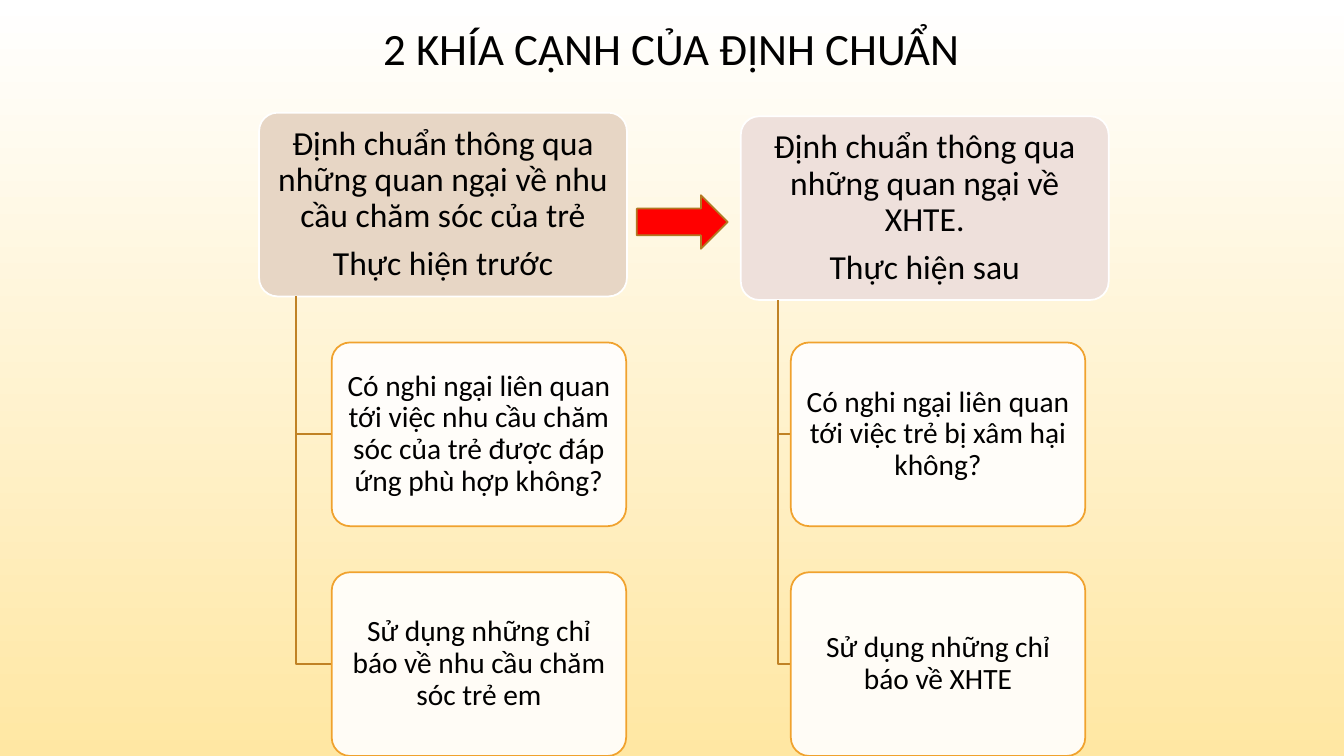
"""Build the slide on the two sides of setting a standard."""
from dataclasses import dataclass

from lxml import etree
from pptx import Presentation
from pptx.dml.color import RGBColor
from pptx.enum.shapes import MSO_SHAPE
from pptx.enum.text import MSO_ANCHOR, MSO_AUTO_SIZE, PP_ALIGN
from pptx.oxml.ns import qn
from pptx.shapes.autoshape import Shape
from pptx.slide import Slide
from pptx.text.text import TextFrame
from pptx.util import Cm, Pt

ROUND = MSO_SHAPE.ROUNDED_RECTANGLE
ARROW = MSO_SHAPE.RIGHT_ARROW
MIDDLE = MSO_ANCHOR.MIDDLE
CENTER = PP_ALIGN.CENTER
NO_FIT = MSO_AUTO_SIZE.NONE

FONT = "Calibri"
COLORS = {
    "text": "000000", "white": "FFFFFF", "sand": "FFE7A3",
    "tan": "E7D6C5", "rose": "EEE0DB", "gold": "F0A22E",
    "spine": "C08225", "red": "FF0000", "edge": "B27822",
}
HEAD_W, ITEM_W, CARD_H = 9.27, 7.42, 4.63
ITEM_TOP, ITEM_STEP = 8.63, 5.79


@dataclass
class Box:
    left: float
    top: float
    width: float
    height: float


@dataclass
class Branch:
    left: float
    top: float
    fill: str
    head: list[str]
    item_left: float
    items: list[str]


BRANCHES = [
    Branch(6.53, 2.84, "tan",
           ["Định chuẩn thông qua những quan ngại về nhu cầu chăm sóc của trẻ",
            "Thực hiện trước"],
           8.36,
           ["Có nghi ngại liên quan tới việc nhu cầu chăm sóc của trẻ "
            "được đáp ứng phù hợp không?",
            "Sử dụng những chỉ báo về nhu cầu chăm sóc trẻ em"]),
    Branch(18.67, 2.93, "rose",
           ["Định chuẩn thông qua những quan ngại về XHTE.",
            "Thực hiện sau"],
           19.93,
           ["Có nghi ngại liên quan tới việc trẻ bị xâm hại không?",
            "Sử dụng những chỉ báo về XHTE"]),
]


def color(name: str) -> RGBColor:
    """Look up a colour by name."""
    return RGBColor.from_string(COLORS[name])


def outline(shape: Shape, line: str) -> None:
    """Set the line of a shape and drop its shadow."""
    shape.shadow.inherit = False
    shape.line.color.rgb = color(line)
    shape.line.width = Pt(1.25)


def add_box(slide: Slide, kind: MSO_SHAPE, box: Box, fill: str, line: str) -> Shape:
    """Add a filled preset shape."""
    shape = slide.shapes.add_shape(
        kind, Cm(box.left), Cm(box.top), Cm(box.width), Cm(box.height))
    shape.fill.solid()
    shape.fill.fore_color.rgb = color(fill)
    outline(shape, line)
    return shape


def write(frame: TextFrame, lines: list[str], size: int, after: float = 0) -> None:
    """Fill a text frame with centred lines."""
    frame.text = "\n".join(lines)
    frame.word_wrap = True
    frame.auto_size = NO_FIT
    frame.vertical_anchor = MIDDLE
    for para in frame.paragraphs:
        para.alignment = CENTER
        para.line_spacing = 0.9
        para.space_before = Pt(0)
        para.space_after = Pt(after)
        para.font.name = FONT
        para.font.size = Pt(size)
        para.font.color.rgb = color("text")


def add_card(slide: Slide, box: Box, fill: str, line: str,
             lines: list[str], size: int) -> Shape:
    """Add a rounded card with text."""
    card = add_box(slide, ROUND, box, fill, line)
    card.adjustments[0] = 0.1
    frame = card.text_frame
    frame.margin_left = frame.margin_right = Cm(0.12)
    frame.margin_top = frame.margin_bottom = Cm(0.08)
    write(frame, lines, size, size * 0.35)
    return card


def add_elbow(slide: Slide, left: float, top: float, right: float, low: float) -> None:
    """Add a line that runs down and then right."""
    path = slide.shapes.build_freeform(Cm(left), Cm(top))
    path.add_line_segments(
        [(Cm(left), Cm(low)), (Cm(right), Cm(low))], close=False)
    elbow = path.convert_to_shape()
    elbow.fill.background()
    outline(elbow, "spine")


def add_branch(slide: Slide, branch: Branch) -> None:
    """Add a head card and the items hung below it."""
    add_card(slide, Box(branch.left, branch.top, HEAD_W, CARD_H),
             branch.fill, "white", branch.head, 24)
    for row, text in enumerate(branch.items):
        top = ITEM_TOP + row * ITEM_STEP
        add_elbow(slide, branch.left + HEAD_W / 10, branch.top + CARD_H,
                  branch.item_left, top + CARD_H / 2)
        card = add_card(slide, Box(branch.item_left, top, ITEM_W, CARD_H),
                        "white", "gold", [text], 21)
        tint = card.element.spPr.find(f"{qn('a:solidFill')}/{qn('a:srgbClr')}")
        etree.SubElement(tint, qn("a:alpha"), val="90000")


def main() -> None:
    """Build and save the slide."""
    deck = Presentation()
    deck.slide_width, deck.slide_height = Cm(33.87), Cm(19.05)
    slide = deck.slides.add_slide(deck.slide_layouts[5])

    back = slide.background.fill
    back.gradient()
    back.gradient_angle = 270
    for stop, name in zip(back.gradient_stops, ("white", "sand")):
        stop.color.rgb = color(name)

    title = slide.shapes.title
    title.left, title.top = Cm(2.33), Cm(0.53)
    title.width, title.height = Cm(29.21), Cm(1.5)
    write(title.text_frame, ["2 KHÍA CẠNH CỦA ĐỊNH CHUẨN"], 32)

    for branch in BRANCHES:
        add_branch(slide, branch)
    add_box(slide, ARROW, Box(16.05, 4.92, 2.29, 1.35), "red", "edge")
    deck.save("out.pptx")


if __name__ == "__main__":
    main()
